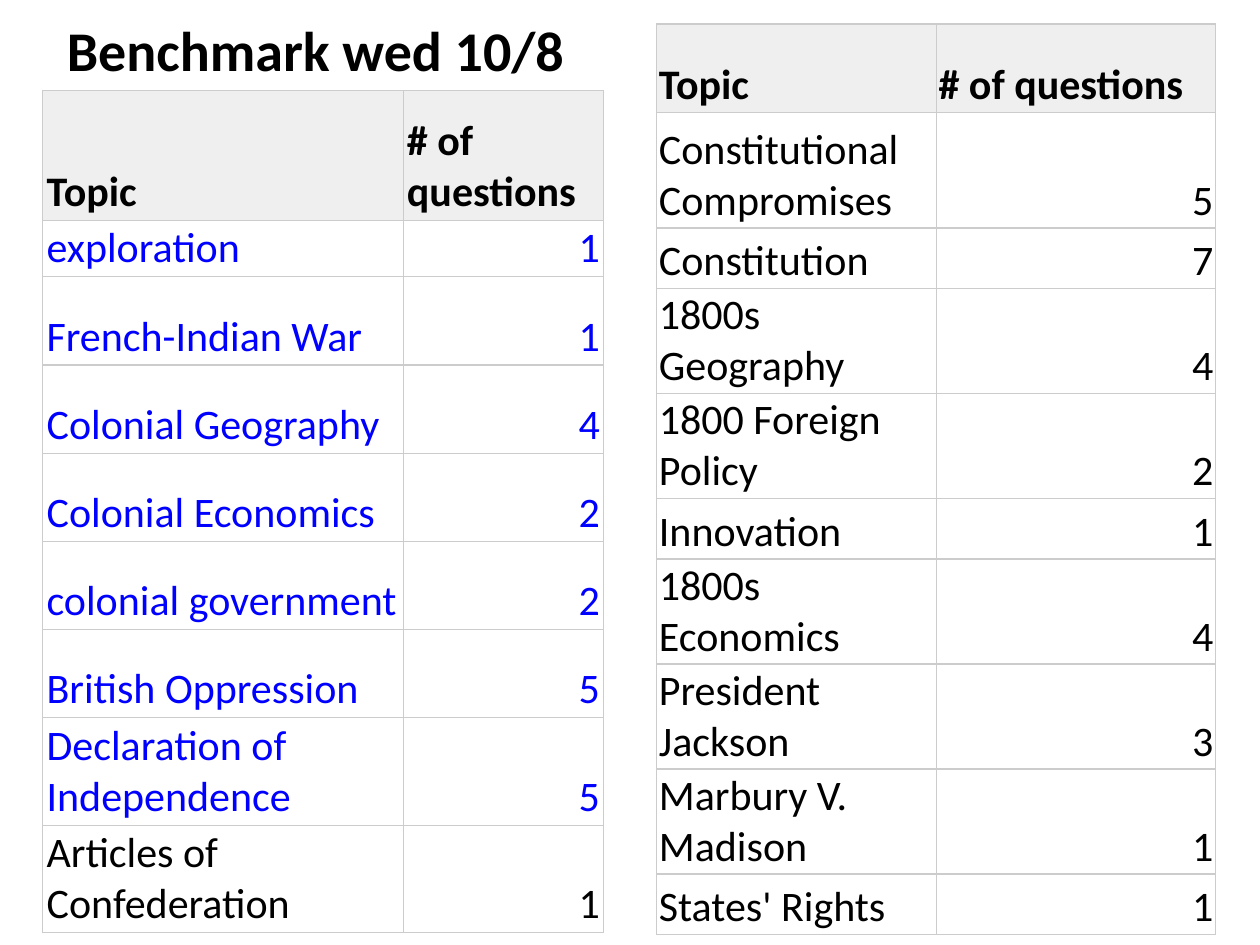
import lxml.etree
import pptx
import pptx.dml.color
import pptx.enum.text
import pptx.oxml.ns
import pptx.util

Inches = pptx.util.Inches
Pt = pptx.util.Pt
ANCHOR = pptx.enum.text.MSO_ANCHOR
ALIGN = pptx.enum.text.PP_ALIGN

COLORS = {
    "text": "000000",
    "reviewed": "0000FF",
    "header": "EFEFEF",
    "border": "CCCCCC",
}

COLONIAL_TOPICS = [
    ("exploration", 1),
    ("French-Indian War", 1),
    ("Colonial Geography", 4),
    ("Colonial Economics", 2),
    ("colonial government", 2),
    ("British Oppression", 5),
    ("Declaration of Independence", 5),
    ("Articles of Confederation", 1),
]
REVIEWED_COUNT = 7

NATIONAL_TOPICS = [
    ("Constitutional Compromises", 5),
    ("Constitution", 7),
    ("1800s Geography", 4),
    ("1800 Foreign Policy", 2),
    ("Innovation", 1),
    ("1800s Economics", 4),
    ("President Jackson", 3),
    ("Marbury V. Madison", 1),
    ("States' Rights", 1),
]


def set_attributes(target, values):
    for name, value in values.items():
        setattr(target, name, value)


class SlideBuilder:
    font_name = "Calibri"
    body_size = 24
    title_size = 32
    border_width = 0.75

    def __init__(self, presentation):
        self.slide = presentation.slides.add_slide(presentation.slide_layouts[5])

    def add_text(self, text_frame, text, size, color="text", bold=False, align=ALIGN.LEFT):
        paragraph = text_frame.paragraphs[0]
        paragraph.alignment = align
        run = paragraph.add_run()
        run.text = text
        set_attributes(run.font, {"name": self.font_name, "size": Pt(size), "bold": bold})
        run.font.color.rgb = pptx.dml.color.RGBColor.from_string(COLORS[color])

    def title(self, text, left, top, width, height):
        shape = self.slide.shapes.title
        set_attributes(shape, {
            "left": Inches(left), "top": Inches(top),
            "width": Inches(width), "height": Inches(height),
        })
        set_attributes(shape.text_frame, {
            "word_wrap": False,
            "vertical_anchor": ANCHOR.TOP,
            "auto_size": pptx.enum.text.MSO_AUTO_SIZE.NONE,
        })
        self.add_text(shape.text_frame, text, self.title_size, bold=True)

    def borders(self, cell):
        properties = cell._tc.get_or_add_tcPr()
        qualified = pptx.oxml.ns.qn
        for side in ("a:lnL", "a:lnR", "a:lnT", "a:lnB"):
            line = lxml.etree.SubElement(
                properties, qualified(side), w=str(int(Pt(self.border_width))))
            fill = lxml.etree.SubElement(line, qualified("a:solidFill"))
            lxml.etree.SubElement(fill, qualified("a:srgbClr"), val=COLORS["border"])

    def cell(self, cell, text, insets, is_header, color, align):
        horizontal, vertical = map(Inches, insets)
        set_attributes(cell, {
            "margin_left": horizontal, "margin_right": horizontal,
            "margin_top": vertical, "margin_bottom": vertical,
            "vertical_anchor": ANCHOR.BOTTOM,
        })
        self.borders(cell)
        if is_header:
            cell.fill.solid()
            cell.fill.fore_color.rgb = pptx.dml.color.RGBColor.from_string(COLORS["header"])
        else:
            cell.fill.background()
        self.add_text(cell.text_frame, text, self.body_size, color, is_header, align)

    def topic_table(self, topics, left, top, widths, heights, insets, reviewed=0):
        rows = [("Topic", "# of questions")] + topics
        table = self.slide.shapes.add_table(
            len(rows), len(widths), Inches(left), Inches(top),
            Inches(sum(widths)), Inches(sum(heights))).table
        set_attributes(table, {"first_row": False, "horz_banding": False})
        for column, width in zip(table.columns, widths):
            column.width = Inches(width)
        for row, height in zip(table.rows, heights):
            row.height = Inches(height)
        for row_index, values in enumerate(rows):
            is_header = row_index == 0
            color = "reviewed" if 1 <= row_index <= reviewed else "text"
            for column_index, value in enumerate(values):
                is_count = column_index == 1 and not is_header
                align = ALIGN.RIGHT if is_count else ALIGN.LEFT
                self.cell(table.cell(row_index, column_index), str(value),
                          insets, is_header, color, align)


def main():
    presentation = pptx.Presentation()
    set_attributes(presentation, {"slide_width": Inches(10), "slide_height": Inches(7.5)})
    builder = SlideBuilder(presentation)
    builder.topic_table(
        COLONIAL_TOPICS, 0.34, 0.72, [2.86, 1.59], [1.03, 0.37] + [0.7] * 7,
        (0.03, 0.02), REVIEWED_COUNT)
    builder.topic_table(
        NATIONAL_TOPICS, 5.21, 0.19, [2.22, 2.22],
        [0.7, 0.92, 0.48, 0.7, 0.7, 0.48, 0.7, 0.48, 0.7, 0.48], (0.02, 0.01))
    builder.title("Benchmark wed 10/8", 0.43, 0.07, 4.19, 0.64)
    presentation.save("out.pptx")


if __name__ == "__main__":
    main()
